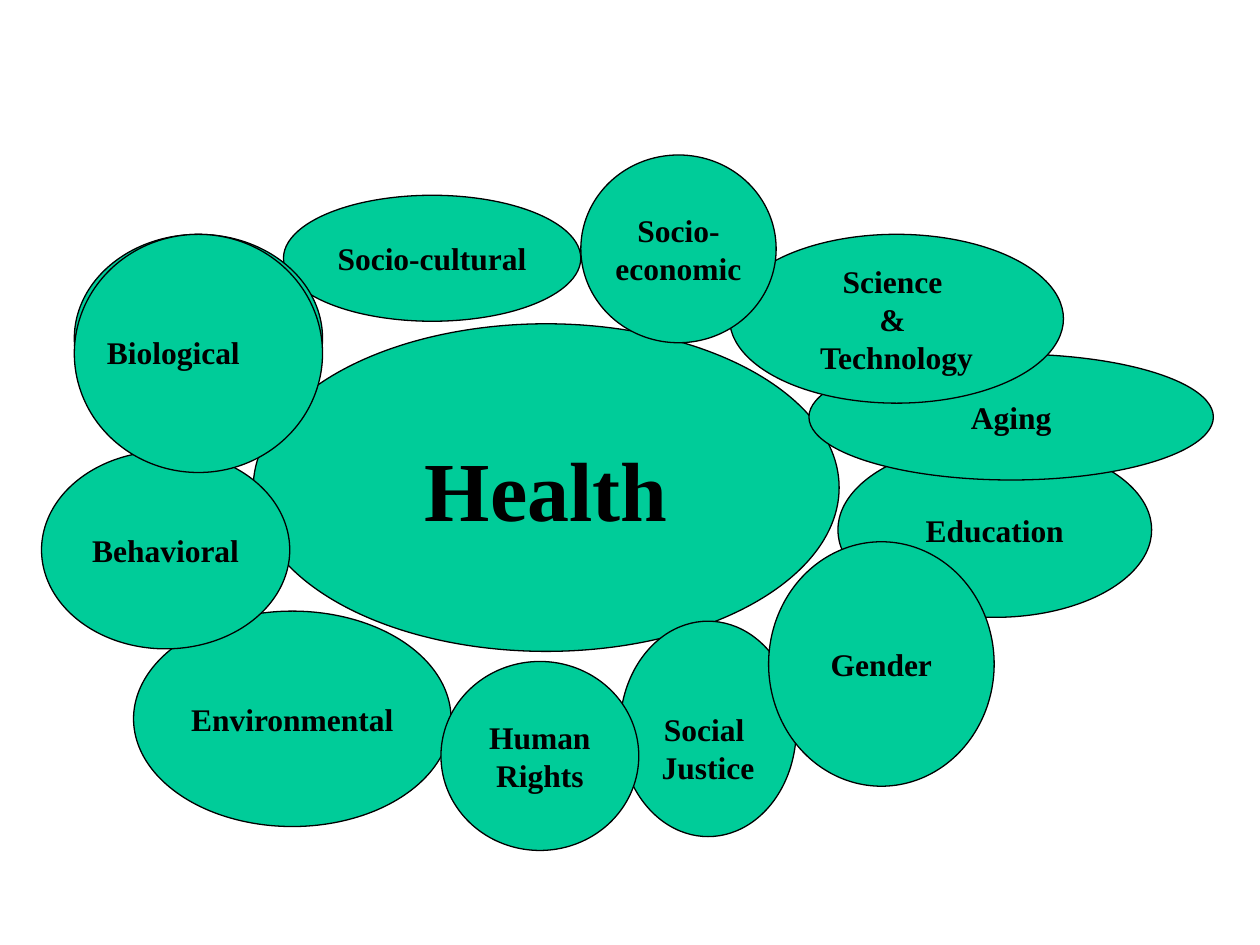
from pptx import Presentation
from pptx.dml.color import RGBColor
from pptx.enum.shapes import MSO_SHAPE
from pptx.enum.text import MSO_ANCHOR, PP_ALIGN
from pptx.util import Inches, Pt

COLORS = {"bubble": "00CC99", "ink": "000000"}
FONT = {"name": "Times New Roman", "bold": True}
LABEL_SIZE = 18
HEALTH_SIZE = 48

# Back to front: lines of the label, (left, top, width, height)
BUBBLES = [
    (["Health"], (2.01, 2.57, 4.65, 2.6)),
    (["Education"], (6.65, 3.51, 2.49, 1.39)),
    (["Social ", "Justice"], (4.92, 4.93, 1.4, 1.71)),
    (["Gender"], (6.1, 4.3, 1.79, 1.94)),
    (["Environmental"], (1.06, 4.85, 2.52, 1.71)),
    (["Human", "Rights"], (3.5, 5.25, 1.57, 1.5)),
    (["Aging"], (6.42, 2.81, 3.21, 1)),
    (["Science ", "& ", "Technology"], (5.79, 1.86, 2.65, 1.34)),
    (["Behavioral"], (0.33, 3.58, 1.97, 1.57)),
    (["Socio-cultural"], (2.25, 1.55, 2.36, 1)),
    (["Socio-", "economic"], (4.61, 1.23, 1.55, 1.49)),
    ([], (0.59, 1.86, 1.97, 1.65)),
    ([], (0.59, 1.86, 1.97, 1.89)),
]
BIOLOGICAL = (["Biological"], (0.75, 2.59, 1.65, 0.4))
LOWERED = {"Social ": 0.35}  # top inset that moves the label down


def color(key):
    return RGBColor.from_string(COLORS[key])


def write(frame, lines, size, align):
    for index, line in enumerate(lines):
        paragraph = frame.paragraphs[0] if index == 0 else frame.add_paragraph()
        paragraph.alignment = align
        run = paragraph.add_run()
        run.text = line
        for key, value in {**FONT, "size": Pt(size)}.items():
            setattr(run.font, key, value)
        run.font.color.rgb = color("ink")


def add_bubble(slide, lines, box):
    bubble = slide.shapes.add_shape(MSO_SHAPE.OVAL, *map(Inches, box))
    bubble.shadow.inherit = False
    bubble.fill.solid()
    bubble.fill.fore_color.rgb = color("bubble")
    bubble.line.color.rgb = color("ink")
    bubble.line.width = Pt(0.75)
    if not lines:
        return
    frame = bubble.text_frame
    frame.word_wrap = False
    frame.vertical_anchor = MSO_ANCHOR.MIDDLE
    frame.margin_top = Inches(LOWERED.get(lines[0], 0.05))
    size = HEALTH_SIZE if lines == ["Health"] else LABEL_SIZE
    write(frame, lines, size, PP_ALIGN.CENTER)


def main():
    deck = Presentation()
    deck.slide_width, deck.slide_height = Inches(10), Inches(7.5)
    slide = deck.slides.add_slide(deck.slide_layouts[6])
    for lines, box in BUBBLES:
        add_bubble(slide, lines, box)
    lines, box = BIOLOGICAL
    frame = slide.shapes.add_textbox(*map(Inches, box)).text_frame
    frame.word_wrap = True
    write(frame, lines, LABEL_SIZE, PP_ALIGN.LEFT)
    deck.save("out.pptx")


if __name__ == "__main__":
    main()
